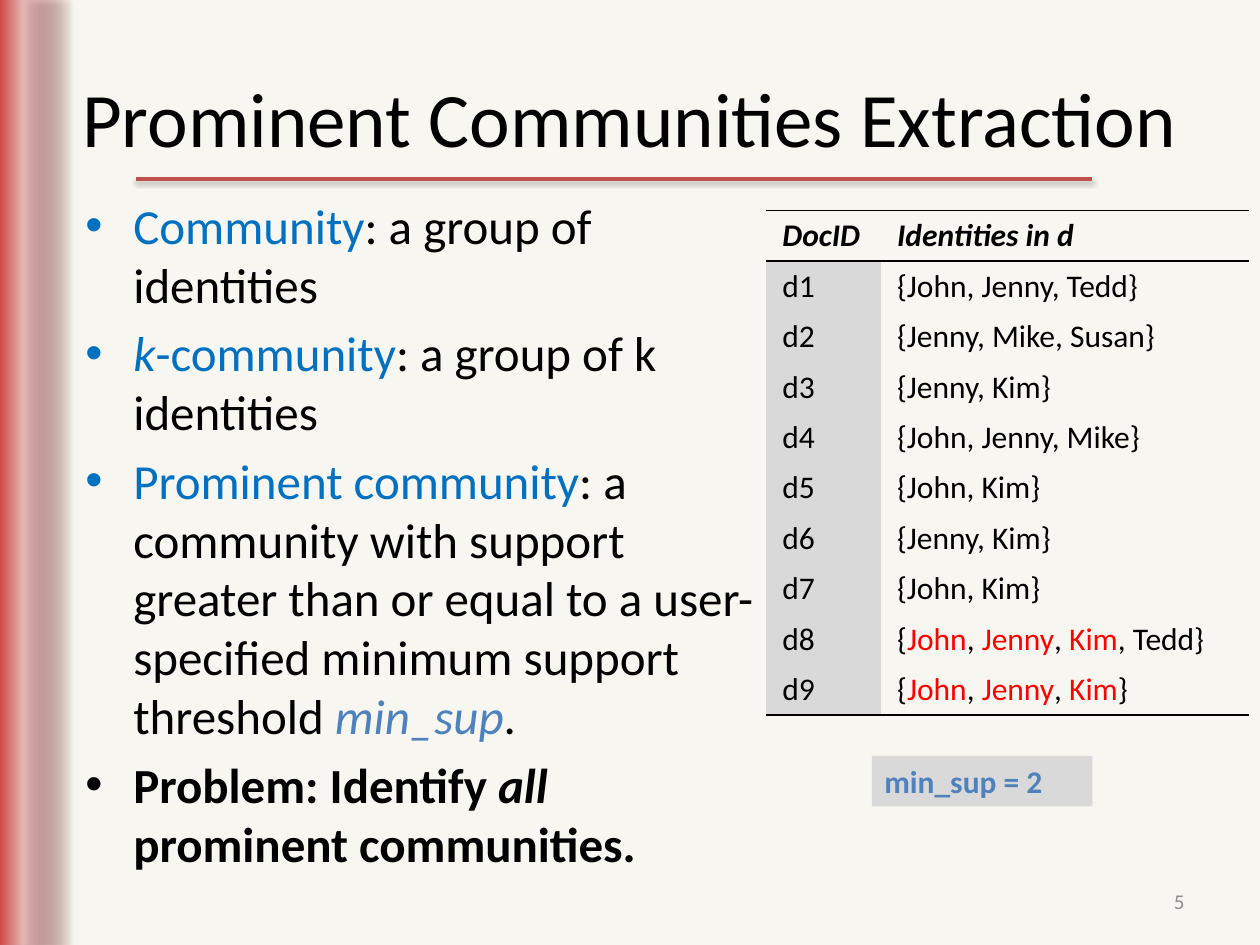
from pptx import Presentation
from pptx.dml.color import RGBColor
from pptx.enum.shapes import MSO_CONNECTOR, MSO_SHAPE
from pptx.enum.text import MSO_ANCHOR, PP_ALIGN
from pptx.oxml import parse_xml
from pptx.oxml.ns import nsdecls
from pptx.util import Inches, Pt

FONT = "Calibri"
BLACK, RED, BLUE, STEEL, GREY = "000000", "FF0000", "0070C0", "4F81BD", "D9D9D9"

TITLE = "Prominent Communities Extraction"
POINTS = [
    [("Community", BLUE, ""), (": a group of identities", BLACK, "")],
    [("k", BLUE, "i"), ("-community", BLUE, ""),
     (": a group of k identities", BLACK, "")],
    [("Prominent community", BLUE, ""),
     (": a community with support greater than or equal to a "
      "user-specified minimum support threshold ", BLACK, ""),
     ("min_sup", STEEL, "i"), (".", BLACK, "")],
    [("Problem: Identify ", BLACK, "b"), ("all", BLACK, "bi"),
     (" prominent communities.", BLACK, "b")],
]
HEAD = ["DocID", "Identities in d"]
DOCS = ["John, Jenny, Tedd", "Jenny, Mike, Susan", "Jenny, Kim",
        "John, Jenny, Mike", "John, Kim", "Jenny, Kim", "John, Kim",
        "John, Jenny, Kim, Tedd", "John, Jenny, Kim"]
GROUP = ["John", "Jenny", "Kim"]
COLS, ROW = (0.91, 2.92), 0.4
STOPS = [(0, "953735", 0), (66, "E6B9B8", 100), (100, "CE3B37", 100)]


def color(code):
    return RGBColor.from_string(code)


def xml(body):
    return parse_xml(body.replace(" ", " " + nsdecls("a") + " ", 1))


def box(left, top, width, height):
    return [Inches(n) for n in (left, top, width, height)]


def write(para, runs, size):
    for text, code, style in runs:
        run = para.add_run()
        run.text = text
        font = run.font
        font.name, font.size = FONT, Pt(size)
        font.color.rgb = color(code)
        font.bold, font.italic = "b" in style, "i" in style


def label(slide, place, runs, size, align, anchor=MSO_ANCHOR.MIDDLE):
    frame = slide.shapes.add_textbox(*box(*place)).text_frame
    frame.word_wrap, frame.vertical_anchor = True, anchor
    frame.paragraphs[0].alignment = align
    write(frame.paragraphs[0], runs, size)


def shade(shape, alpha, blur, dist):
    shape._element.spPr.append(xml(
        f'<a:effectLst ><a:outerShdw blurRad="{Pt(blur)}" dist="{Pt(dist)}" '
        f'dir="5400000" rotWithShape="0"><a:srgbClr val="{BLACK}">'
        f'<a:alpha val="{alpha * 1000}"/></a:srgbClr></a:outerShdw></a:effectLst>'))


def frame_art(slide):
    band = slide.shapes.add_shape(MSO_SHAPE.RECTANGLE, *box(-0.02, 0, 0.6, 7.5))
    band.line.fill.background()
    stops = "".join(
        f'<a:gs pos="{pos * 1000}"><a:srgbClr val="{code}">'
        f'<a:alpha val="{alpha * 1000}"/></a:srgbClr></a:gs>'
        for pos, code, alpha in STOPS)
    band._element.spPr.insert(2, xml(
        f'<a:gradFill ><a:gsLst>{stops}</a:gsLst>'
        '<a:lin ang="10800000" scaled="0"/></a:gradFill>'))
    shade(band, 35, 3.1, 1.8)
    rule = slide.shapes.add_connector(
        MSO_CONNECTOR.STRAIGHT, *box(1.08, 1.42, 8.67, 1.42))
    rule.line.color.rgb, rule.line.width = color("C0504D"), Pt(2)
    shade(rule, 38, 3.1, 1.6)


def bullets(slide):
    frame = slide.shapes.add_textbox(*box(0.58, 1.5, 5.58, 5.58)).text_frame
    frame.word_wrap = True
    for num, runs in enumerate(POINTS):
        para = frame.add_paragraph() if num else frame.paragraphs[0]
        para.space_before = Pt(5.6)
        props = para._p.get_or_add_pPr()
        props.set("marL", str(Inches(0.38)))
        props.set("indent", str(-Inches(0.38)))
        props.append(xml('<a:buFont typeface="Arial"/>'))
        props.append(xml('<a:buChar char="•"/>'))
        write(para, runs, 28)


def names(doc):
    parts = doc.split(", ")
    hit = set(GROUP) <= set(parts)
    runs = [("{", BLACK, "")]
    for num, name in enumerate(parts):
        if num:
            runs.append((", ", BLACK, ""))
        runs.append((name, RED if hit and name in GROUP else BLACK, ""))
    return runs + [("}", BLACK, "")]


def border(cell, sides):
    props = cell._tc.get_or_add_tcPr()
    for num, side in enumerate(sides):
        props.insert(num, xml(
            f'<a:ln{side} w="{Pt(1)}"><a:solidFill><a:srgbClr val="{BLACK}"/>'
            f'</a:solidFill></a:ln{side}>'))


def grid(slide):
    rows = [[[(text, BLACK, "bi")] for text in HEAD]]
    rows += [[[(f"d{num}", BLACK, "")], names(doc)]
             for num, doc in enumerate(DOCS, 1)]
    last = len(rows) - 1
    shape = slide.shapes.add_table(
        len(rows), len(COLS), *box(6.08, 1.67, sum(COLS), ROW * len(rows)))
    table = shape.table
    table.first_row = table.horz_banding = False
    table._tbl.tblPr[0].text = "{2D5ABB26-0587-4C30-8999-92F81FD0307C}"
    for col, width in zip(table.columns, COLS):
        col.width = Inches(width)
    for r, row in enumerate(rows):
        for c, runs in enumerate(row):
            cell = table.cell(r, c)
            cell.margin_left = cell.margin_right = Inches(0.13)
            write(cell.text_frame.paragraphs[0], runs, 18)
            if r and not c:
                cell.fill.solid()
                cell.fill.fore_color.rgb = color(GREY)
            else:
                cell.fill.background()
            border(cell, {0: "TB", last: "B"}.get(r, ""))


def badge(slide):
    shape = slide.shapes.add_shape(MSO_SHAPE.RECTANGLE, *box(6.92, 6, 1.75, 0.4))
    shape.shadow.inherit = False
    shape.fill.solid()
    shape.fill.fore_color.rgb = color(GREY)
    shape.line.fill.background()
    frame = shape.text_frame
    frame.vertical_anchor = MSO_ANCHOR.TOP
    frame.paragraphs[0].alignment = PP_ALIGN.LEFT
    write(frame.paragraphs[0], [("min_sup = 2", STEEL, "b")], 18)


def main():
    deck = Presentation()
    deck.slide_width, deck.slide_height = Inches(10), Inches(7.5)
    slide = deck.slides.add_slide(deck.slide_layouts[6])
    back = slide.background.fill
    back.solid()
    back.fore_color.rgb = color("F7F6F0")
    frame_art(slide)
    label(slide, (0.5, 0.3, 9, 1.25), [(TITLE, BLACK, "")], 44, PP_ALIGN.CENTER)
    bullets(slide)
    label(slide, (7.17, 6.95, 2.33, 0.4), [("5", "8C8C8C", "")], 12, PP_ALIGN.RIGHT)
    grid(slide)
    badge(slide)
    deck.save("out.pptx")


if __name__ == "__main__":
    main()
